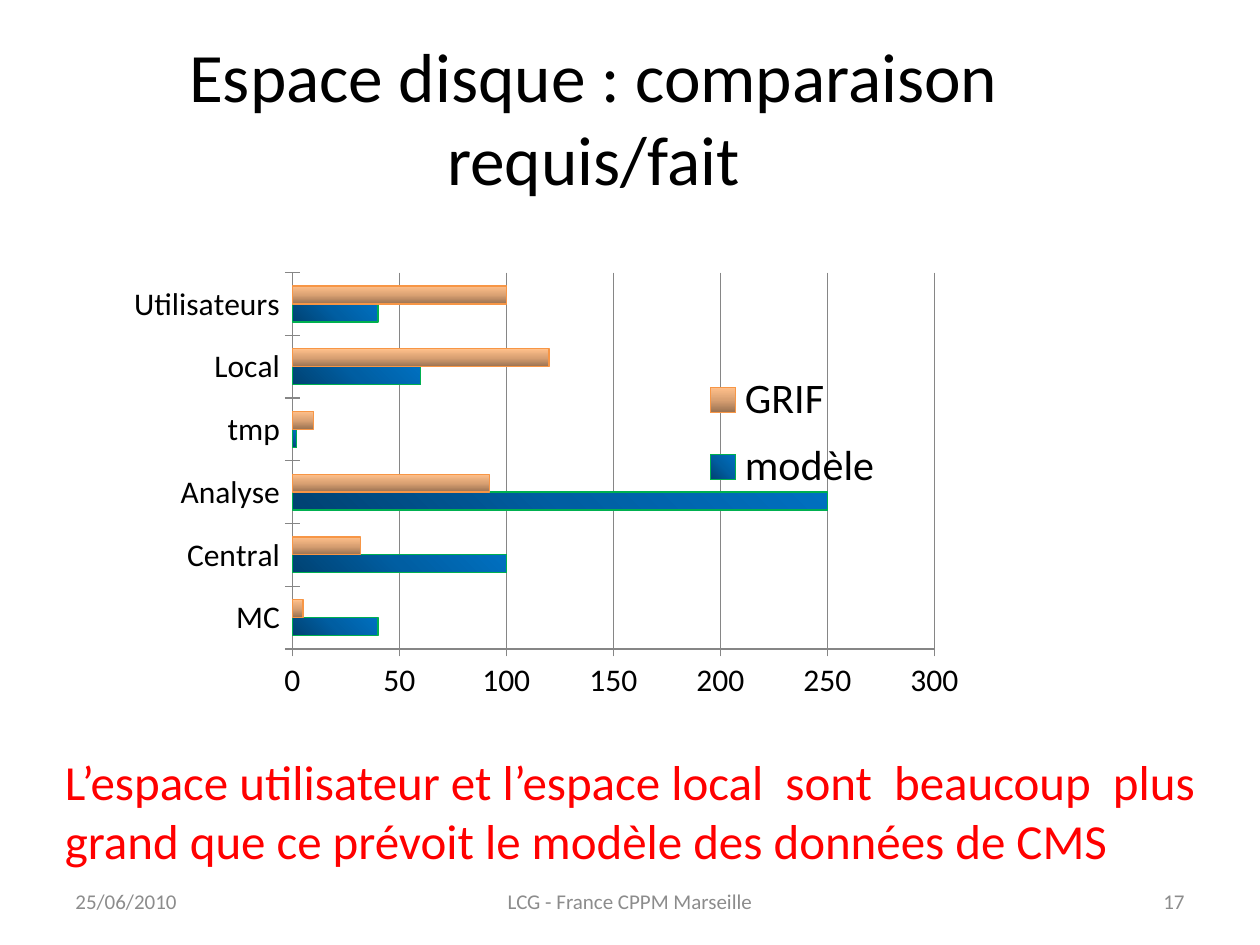
"""Build a slide comparing required and deployed disk space."""
from copy import deepcopy

from lxml import etree
from pptx import Presentation
from pptx import util as u
from pptx.chart import data
from pptx.dml import color
from pptx.enum import chart as c
from pptx.enum import text

BLACK = color.RGBColor(0x00, 0x00, 0x00)
GRAY = color.RGBColor(0x8C, 0x8C, 0x8C)
AXIS_GRAY = color.RGBColor(0x86, 0x86, 0x86)
RED = color.RGBColor(0xFF, 0x00, 0x00)
GREEN = color.RGBColor(0x00, 0xB0, 0x50)
ORANGE = color.RGBColor(0xF7, 0x96, 0x46)
BLUES = [color.RGBColor.from_string(code) for code in ("004272", "005EA2", "0070C0")]
TANS = [color.RGBColor.from_string(code) for code in ("997151", "DAA173", "FFC08B")]


def write(shape, wording, size, ink, align, anchor):
    frame = shape.text_frame
    frame.text = wording
    for name, value in {"word_wrap": True, "vertical_anchor": anchor,
                        "auto_size": text.MSO_AUTO_SIZE.NONE}.items():
        setattr(frame, name, value)
    paragraph = frame.paragraphs[0]
    paragraph.alignment = align
    set_font(paragraph.runs[0].font, size, ink)


def set_font(font, size, ink):
    for name, value in {"name": "Calibri", "size": u.Pt(size), "bold": False}.items():
        setattr(font, name, value)
    font.color.rgb = ink


presentation = Presentation()
presentation.slide_width, presentation.slide_height = u.Pt(720), u.Pt(540)
slide = presentation.slides.add_slide(presentation.slide_layouts[5])

LEFT, CENTER, RIGHT = text.PP_ALIGN.LEFT, text.PP_ALIGN.CENTER, text.PP_ALIGN.RIGHT
TOP, MIDDLE = text.MSO_ANCHOR.TOP, text.MSO_ANCHOR.MIDDLE

title = slide.shapes.title
for name, value in {"left": 36, "top": 21.6, "width": 606.24, "height": 90}.items():
    setattr(title, name, u.Pt(value))
write(title, "Espace disque : comparaison requis/fait", 39.6, BLACK, CENTER, MIDDLE)

chart_data = data.CategoryChartData()
chart_data.categories = ["MC", "Central", "Analyse", "tmp", "Local", "Utilisateurs"]
chart_data.add_series("modèle ", (40, 100, 250, 2, 60, 40))
chart_data.add_series("GRIF", (5, 32, 92, 10, 120, 100))
chart = slide.shapes.add_chart(c.XL_CHART_TYPE.BAR_CLUSTERED, u.Pt(54), u.Pt(149.76),
                               u.Pt(617.76), u.Pt(275.76), chart_data).chart
set_font(chart.font, 18, BLACK)
chart.has_title = False
chart.has_legend = True
chart.legend.position = c.XL_LEGEND_POSITION.RIGHT
chart.legend.include_in_layout = False
set_font(chart.legend.font, 24, BLACK)

plot = chart.plots[0]
for name, value in {"gap_width": 150, "overlap": 0, "vary_by_categories": False}.items():
    setattr(plot, name, value)

styles = [(BLUES, 45, GREEN), (TANS, 90, ORANGE)]
for series, (shades, angle, outline) in zip(plot.series, styles):
    fill = series.format.fill
    fill.gradient()
    fill.gradient_angle = angle
    first_stop = series.format.fill._xPr.xpath(".//a:gs")[0]
    first_stop.addnext(deepcopy(first_stop))
    for stop, shade, position in zip(fill.gradient_stops, shades, (0, 0.5, 1)):
        stop.color.rgb = shade
        stop.position = position
    series.format.line.color.rgb = outline
    series.format.line.width = u.Pt(0.75)

for axis in (chart.category_axis, chart.value_axis):
    axis.major_tick_mark = c.XL_TICK_MARK.CROSS
    axis.minor_tick_mark = c.XL_TICK_MARK.NONE
    axis.format.line.color.rgb = AXIS_GRAY
    axis.format.line.width = u.Pt(0.75)
for name, value in {"minimum_scale": 0, "maximum_scale": 300, "major_unit": 50,
                    "has_major_gridlines": True}.items():
    setattr(chart.value_axis, name, value)
gridlines = chart.value_axis.major_gridlines.format.line
gridlines.color.rgb = AXIS_GRAY
gridlines.width = u.Pt(0.75)

chart_space = chart._chartSpace
namespace = chart_space.nsmap["c"]
plot_area = chart_space.xpath("c:chart/c:plotArea")[0]
for old_layout in chart_space.xpath("c:chart/c:plotArea/c:layout | .//c:legend/c:layout"):
    old_layout.getparent().remove(old_layout)
legend_position = chart_space.xpath(".//c:legendPos")[0]
layouts = [
    ({"layoutTarget": "inner"}, {"x": 0.183, "y": 0.022, "w": 0.594, "h": 0.78}),
    ({}, {"x": 0.56, "y": 0.2, "w": 0.18, "h": 0.31}),
]
for index, (target, box) in enumerate(layouts):
    layout = etree.Element(f"{{{namespace}}}layout")
    manual = etree.SubElement(layout, f"{{{namespace}}}manualLayout")
    settings = {**target, "xMode": "edge", "yMode": "edge", **box}
    for name, value in settings.items():
        etree.SubElement(manual, f"{{{namespace}}}{name}").set("val", str(value))
    if index == 0:
        plot_area.insert(0, layout)
    else:
        legend_position.addnext(layout)

conclusion = ("L’espace utilisateur et l’espace local  sont  beaucoup  plus "
              "grand que ce prévoit le modèle des données de CMS")
text_boxes = [
    ("25/06/2010", 36, 500.5, 168, 28.75, 12, GRAY, LEFT, MIDDLE),
    ("LCG - France CPPM Marseille", 246, 500.5, 228, 28.75, 12, GRAY, CENTER, MIDDLE),
    ("17", 516, 500.5, 168, 28.75, 12, GRAY, RIGHT, MIDDLE),
    (conclusion, 30, 426, 690, 75, 28, RED, LEFT, TOP),
]
for wording, left, top, width, height, *style in text_boxes:
    box = slide.shapes.add_textbox(u.Pt(left), u.Pt(top), u.Pt(width), u.Pt(height))
    write(box, wording, *style)

presentation.save("out.pptx")
